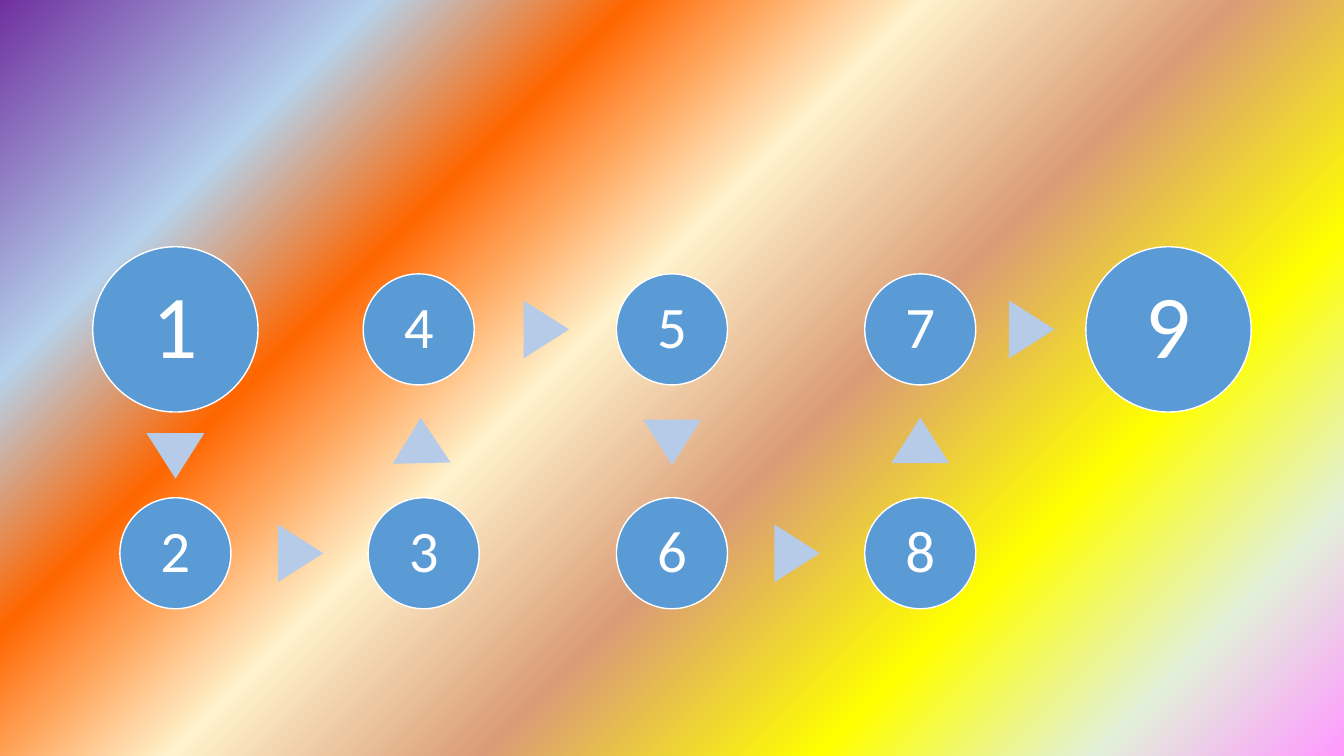
"""Build a slide with nine numbered circles joined by arrowheads."""
from dataclasses import dataclass
from math import atan2, degrees, hypot

from lxml.etree import SubElement
from pptx import Presentation
from pptx.dml.color import RGBColor
from pptx.enum.shapes import MSO_SHAPE
from pptx.enum.text import MSO_ANCHOR, PP_ALIGN
from pptx.oxml.ns import qn
from pptx.util import Pt

BACKGROUND = [
    (0, "7030A0"), (18, "B5D2EC"), (30, "FF6600"), (44, "FFF2CC"),
    (59, "DA9C76"), (75, "FFFF00"), (88, "E2F0D9"), (100, "FF99FF"),
]
STEPS = {
    "1": ("top", 0, "large"),
    "2": ("bottom", 0, "small"),
    "3": ("bottom", 1, "small"),
    "4": ("top", 0.98, "small"),
    "5": ("top", 2, "small"),
    "6": ("bottom", 2, "small"),
    "8": ("bottom", 3, "small"),
    "7": ("top", 3, "small"),
    "9": ("top", 4, "large"),
}


@dataclass(frozen=True)
class Theme:
    font: str = "Calibri"
    circle: RGBColor = RGBColor.from_string("5B9BD5")
    arrow: RGBColor = RGBColor.from_string("B5CBE7")
    light: RGBColor = RGBColor.from_string("FFFFFF")
    large: int = 64
    small: int = 42


THEME = Theme()
SLIDE_W, SLIDE_H = 960, 540
LEFT, COLUMN_STEP = 125.3, 177.35
ROW_Y = {"top": 235.3, "bottom": 395.2}
DIAMETER = {"large": 118.1, "small": 79.3}
INSET = {"large": 6.4, "small": 4.2}
ARROW_W, ARROW_H = 41.3, 32.5
ARROW_NUDGE = 0.7


def center(step):
    row, column, _ = STEPS[step]
    return LEFT + column * COLUMN_STEP, ROW_Y[row]


def add_centered(shapes, kind, x, y, w, h, color):
    sp = shapes.add_shape(kind, Pt(x - w / 2), Pt(y - h / 2), Pt(w), Pt(h))
    sp.shadow.inherit = False
    sp.fill.solid()
    sp.fill.fore_color.rgb = color
    return sp


def add_circle(shapes, step):
    size = STEPS[step][2]
    d = DIAMETER[size]
    sp = add_centered(shapes, MSO_SHAPE.OVAL, *center(step), d, d, THEME.circle)
    sp.line.color.rgb = THEME.light
    sp.line.width = Pt(1)
    tf = sp.text_frame
    tf.word_wrap = True
    tf.vertical_anchor = MSO_ANCHOR.MIDDLE
    tf.margin_left = tf.margin_right = Pt(INSET[size])
    tf.margin_top = tf.margin_bottom = Pt(INSET[size])
    p = tf.paragraphs[0]
    p.alignment = PP_ALIGN.CENTER
    p.line_spacing = 0.9
    r = p.add_run()
    r.text = step
    r.font.name = THEME.font
    r.font.size = Pt(getattr(THEME, size))
    r.font.color.rgb = THEME.light


def add_arrow(shapes, start, end):
    (x1, y1), (x2, y2) = center(start), center(end)
    r1, r2 = (DIAMETER[STEPS[step][2]] / 2 for step in (start, end))
    length = hypot(x2 - x1, y2 - y1)
    ux, uy = (x2 - x1) / length, (y2 - y1) / length
    along = (length + r1 - r2) / 2 + ARROW_NUDGE
    sp = add_centered(shapes, MSO_SHAPE.ISOSCELES_TRIANGLE,
                      x1 + ux * along, y1 + uy * along,
                      ARROW_W, ARROW_H, THEME.arrow)
    sp.line.fill.background()
    sp.rotation = round(degrees(atan2(ux, -uy)) % 360, 1)


def paint_background(s):
    fill = s.background.fill
    fill.gradient()
    fill.gradient_angle = 315
    stops = s.element.find(".//" + qn("a:gsLst"))
    for stop in list(stops):
        stops.remove(stop)
    for percent, color in BACKGROUND:
        gs = SubElement(stops, qn("a:gs"), pos=str(percent * 1000))
        SubElement(gs, qn("a:srgbClr"), val=color)


def main():
    prs = Presentation()
    prs.slide_width, prs.slide_height = Pt(SLIDE_W), Pt(SLIDE_H)
    s = prs.slides.add_slide(prs.slide_layouts[6])
    paint_background(s)
    shapes = s.shapes.add_group_shape().shapes
    order = list(STEPS)
    for step in order:
        add_circle(shapes, step)
    for start, end in zip(order, order[1:]):
        add_arrow(shapes, start, end)
    prs.save("out.pptx")


if __name__ == "__main__":
    main()
